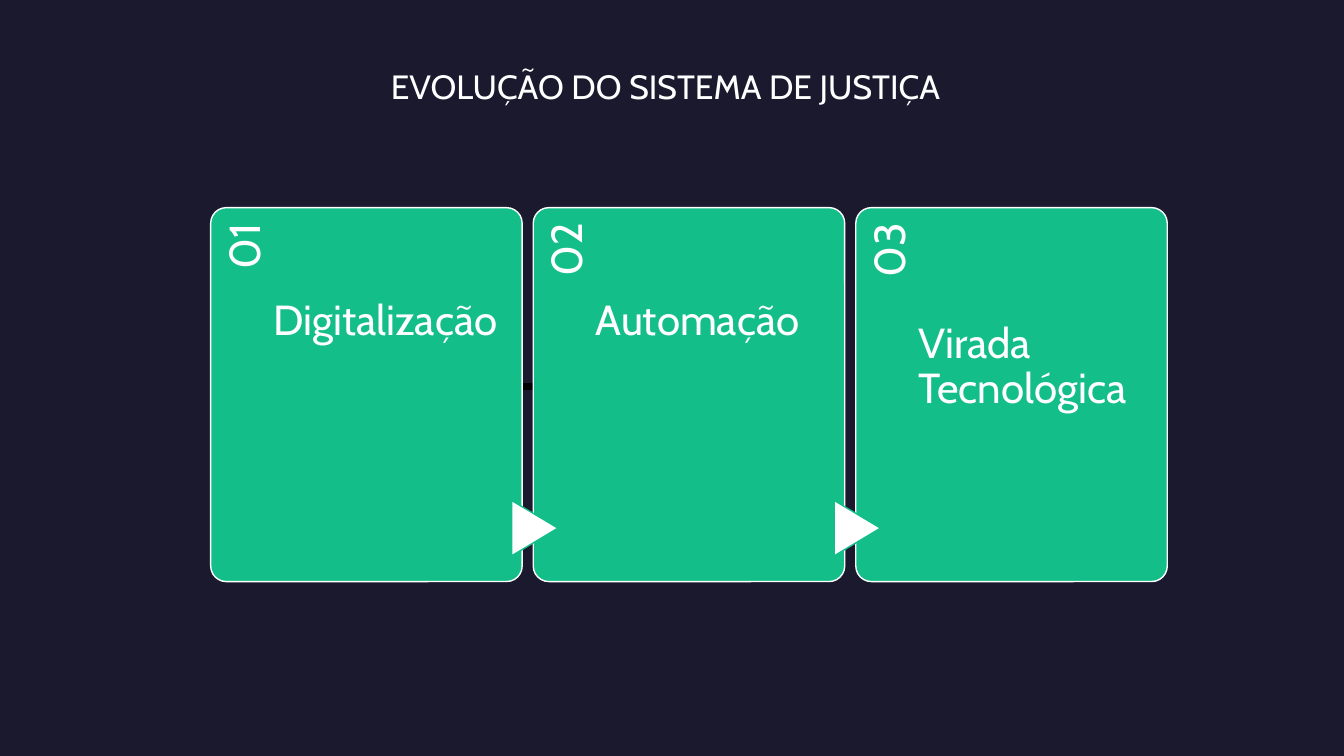
import pptx
import pptx.dml.color
import pptx.enum.shapes
import pptx.enum.text
import pptx.util

Pt = pptx.util.Pt
SHAPES = pptx.enum.shapes.MSO_SHAPE
ALIGN = pptx.enum.text.PP_ALIGN

TITLE = "EVOLUÇÃO DO SISTEMA DE JUSTIÇA "
STAGES = ["Digitalização", "Automação", "Virada Tecnológica"]

FONT = "Cabin"
NAVY, GREEN, WHITE, BLACK = "1B192E", "13BE89", "FFFFFF", "000000"

CARD_LEFT, CARD_TOP = 150.5, 148.3
CARD_WIDTH, CARD_HEIGHT = 222.5, 267.1
CARD_PITCH = 230.4
NUMBER_WIDTH, NUMBER_HEIGHT = 218.9, 44.6
ARROW_WIDTH, ARROW_HEIGHT = 39.6, 33.1


def paint(format_with_color, color):
    format_with_color.solid()
    format_with_color.fore_color.rgb = pptx.dml.color.RGBColor.from_string(color)


def add_shape(page, kind, frame, fill, line=None):
    shape = page.shapes.add_shape(kind, *map(Pt, frame))
    shape.shadow.inherit = False
    paint(shape.fill, fill)
    if line:
        paint(shape.line.fill, line)
        shape.line.width = Pt(1)
    else:
        shape.line.fill.background()
    return shape


def add_text(page, text, frame, size, align, margins, line_spacing=1.0):
    """Add white text; margins run left, top, right, bottom."""
    box = page.shapes.add_textbox(*map(Pt, frame))
    body = box.text_frame
    body.word_wrap = True
    body.margin_left, body.margin_top, body.margin_right, body.margin_bottom = map(Pt, margins)
    para = body.paragraphs[0]
    para.text = text
    para.alignment = align
    para.line_spacing = line_spacing
    para.font.name = FONT
    para.font.size = Pt(size)
    paint(para.font.fill, WHITE)
    return box


def add_stage(page, index, label):
    left = CARD_LEFT + index * CARD_PITCH
    card = add_shape(page, SHAPES.ROUNDED_RECTANGLE,
                     (left, CARD_TOP, CARD_WIDTH, CARD_HEIGHT), GREEN, WHITE)
    card.adjustments[0] = 0.05

    # The number box turns about its centre, so its long side runs down the card.
    turn_shift = (NUMBER_WIDTH - NUMBER_HEIGHT) / 2
    number = add_text(page, f"{index + 1:02}",
                      (left - turn_shift, CARD_TOP + turn_shift, NUMBER_WIDTH, NUMBER_HEIGHT),
                      31, ALIGN.RIGHT, (0, 8.6, 10.8, 0), 0.9)
    number.rotation = 270

    if index > 0:
        arrow = add_shape(page, SHAPES.FLOWCHART_EXTRACT,
                          (left - 18.7, 360.7, ARROW_WIDTH, ARROW_HEIGHT), WHITE, GREEN)
        arrow.rotation = 90

    add_text(page, label, (left + NUMBER_HEIGHT, CARD_TOP, 165.6, CARD_HEIGHT),
             30, ALIGN.LEFT, (0, 98.3, 0, 0), 0.9)


def main():
    deck = pptx.Presentation()
    deck.slide_width, deck.slide_height = Pt(960), Pt(540)
    page = deck.slides.add_slide(deck.slide_layouts[6])
    paint(page.background.fill, NAVY)

    # Short dark bar that joins the first two cards.
    add_shape(page, SHAPES.RECTANGLE,
              (CARD_LEFT + CARD_WIDTH, 273.6, CARD_PITCH - CARD_WIDTH, 5), BLACK)
    for index, label in enumerate(STAGES):
        add_stage(page, index, label)
    add_text(page, TITLE, (267.8, 43.2, 420.5, 36), 24, ALIGN.CENTER, (7.2, 3.6, 7.2, 3.6))

    deck.save("out.pptx")


if __name__ == "__main__":
    main()
